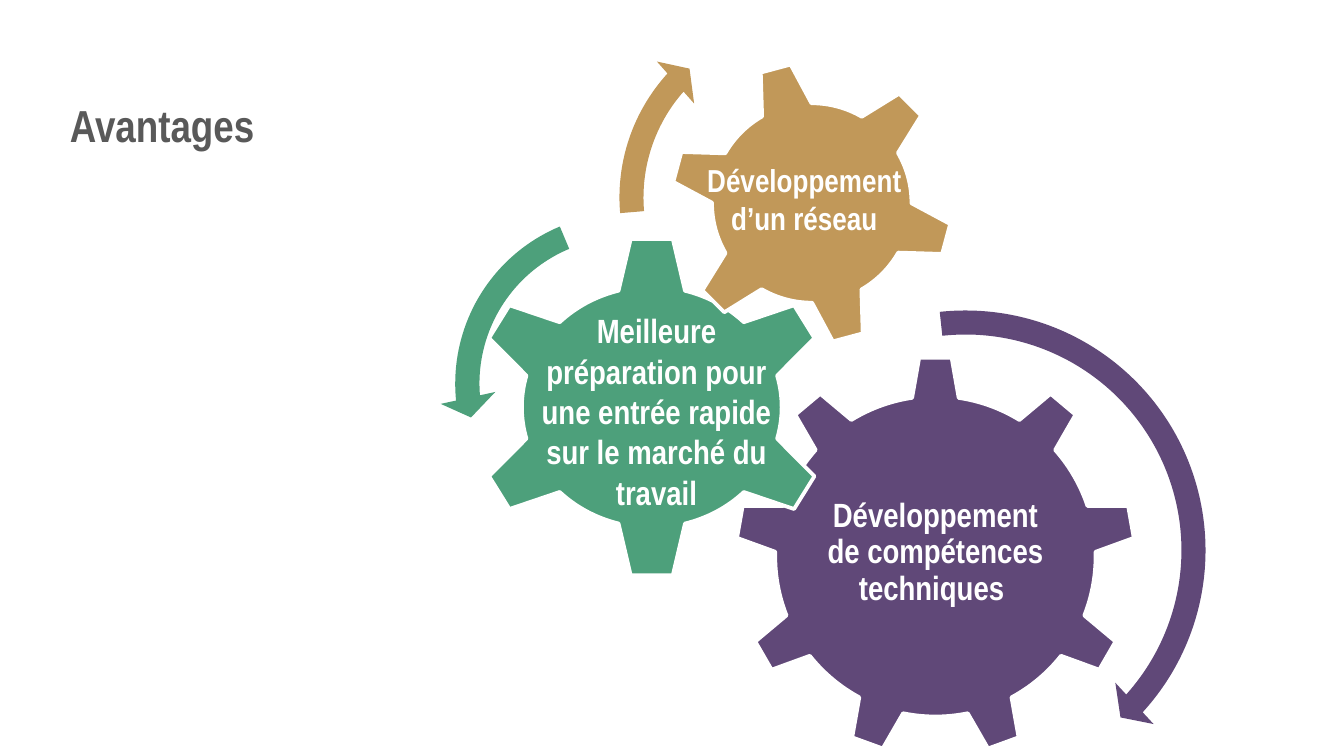
from pptx import Presentation
from pptx.dml.color import RGBColor
from pptx.enum.shapes import MSO_SHAPE as Preset
from pptx.enum.text import MSO_ANCHOR as Anchor, MSO_AUTO_SIZE as AutoSize, PP_ALIGN as Align
from pptx.util import Inches, Pt

WHITE, GREY = "FFFFFF", "595959"
PURPLE, GREEN, GOLD = "604878", "4DA07B", "C19859"


def rgb(value):
    return RGBColor.from_string(value)


def set_all(target, formats):
    for attribute, value in formats.items():
        setattr(target, attribute, value)


def add_label(slide, box, text, size, color=WHITE, frame_format=None, paragraph_format=None):
    frame = slide.shapes.add_textbox(*map(Inches, box)).text_frame
    set_all(frame, {"word_wrap": True, **(frame_format or {})})
    paragraph = frame.paragraphs[0]
    set_all(paragraph, {"alignment": Align.CENTER, **(paragraph_format or {})})
    phrase = paragraph.add_run()
    phrase.text = text
    set_all(phrase.font, {"name": "Arial Narrow", "size": Pt(size), "bold": True})
    phrase.font.color.rgb = rgb(color)


def add_solid(slide, preset, box, color):
    solid = slide.shapes.add_shape(preset, *map(Inches, box))
    solid.shadow.inherit = False
    solid.fill.solid()
    solid.fill.fore_color.rgb = rgb(color)
    return solid


def add_gear(slide, preset, box, color, rotation=0):
    gear = add_solid(slide, preset, box, color)
    gear.rotation = rotation
    gear.line.color.rgb = rgb(WHITE)
    gear.line.width = Pt(2)


def add_turn_arrow(slide, preset, box, color, adjustments):
    arrow = add_solid(slide, preset, box, color)
    arrow.line.fill.background()
    for index, value in enumerate(adjustments):
        arrow.adjustments[index] = value


def insets(size):
    sides = ("left", "top", "right", "bottom")
    return {f"margin_{side}": Inches(size) for side in sides}


def add_title(slide, box):
    add_label(slide, box, "Avantages", 24, GREY, insets(0),
              {"alignment": Align.LEFT, "line_spacing": 0.9})


def add_gear_train(slide, left, top):
    def place(x, y, width, height):
        return left + x, top + y, width, height

    add_gear(slide, Preset.GEAR_9, place(2.2, 2.67, 2.98, 2.98), PURPLE)
    add_label(slide, place(2.8, 3.37, 1.78, 1.53), "Développement de compétences techniques ", 18,
              frame_format={"vertical_anchor": Anchor.MIDDLE, **insets(0.03)},
              paragraph_format={"line_spacing": 0.9, "space_after": Pt(6)})
    add_gear(slide, Preset.GEAR_6, place(0.23, 1.77, 2.7, 2.56), GREEN)
    add_gear(slide, Preset.GEAR_6, place(1.71, 0.47, 2.12, 2.12), GOLD, 345)

    add_turn_arrow(slide, Preset.CIRCULAR_ARROW, place(2.01, 2.21, 3.81, 3.81), PURPLE,
                   (0.047, 2.99, 25.316, 158.283, 0.055))
    add_turn_arrow(slide, Preset.LEFT_CIRCULAR_ARROW, place(0, 1.49, 2.77, 2.77), GREEN,
                   (0.065, 4.3, 104.891, 148.378, 0.075))
    add_turn_arrow(slide, Preset.CIRCULAR_ARROW, place(1.22, 0, 2.98, 2.98), GOLD,
                   (0.06, 3.941, 133.138, 105.082, 0.07))

    growing = {"auto_size": AutoSize.SHAPE_TO_FIT_TEXT}
    add_label(slide, place(1.73, 1.17, 1.97, 0.67), "Développement d’un réseau", 17,
              frame_format=growing)
    add_label(slide, place(0.63, 2.28, 1.97, 1.92),
              "Meilleure préparation pour une entrée rapide sur le marché du travail", 18,
              frame_format=growing)


def main():
    presentation = Presentation()
    width = Inches(10)
    set_all(presentation, {"slide_width": width, "slide_height": width * 9 // 16})
    slide = presentation.slides.add_slide(presentation.slide_layouts[6])
    add_title(slide, (0.52, 0.77, 9.45, 0.39))
    add_gear_train(slide, 3.27, -0.02)
    presentation.save("out.pptx")


if __name__ == "__main__":
    main()
